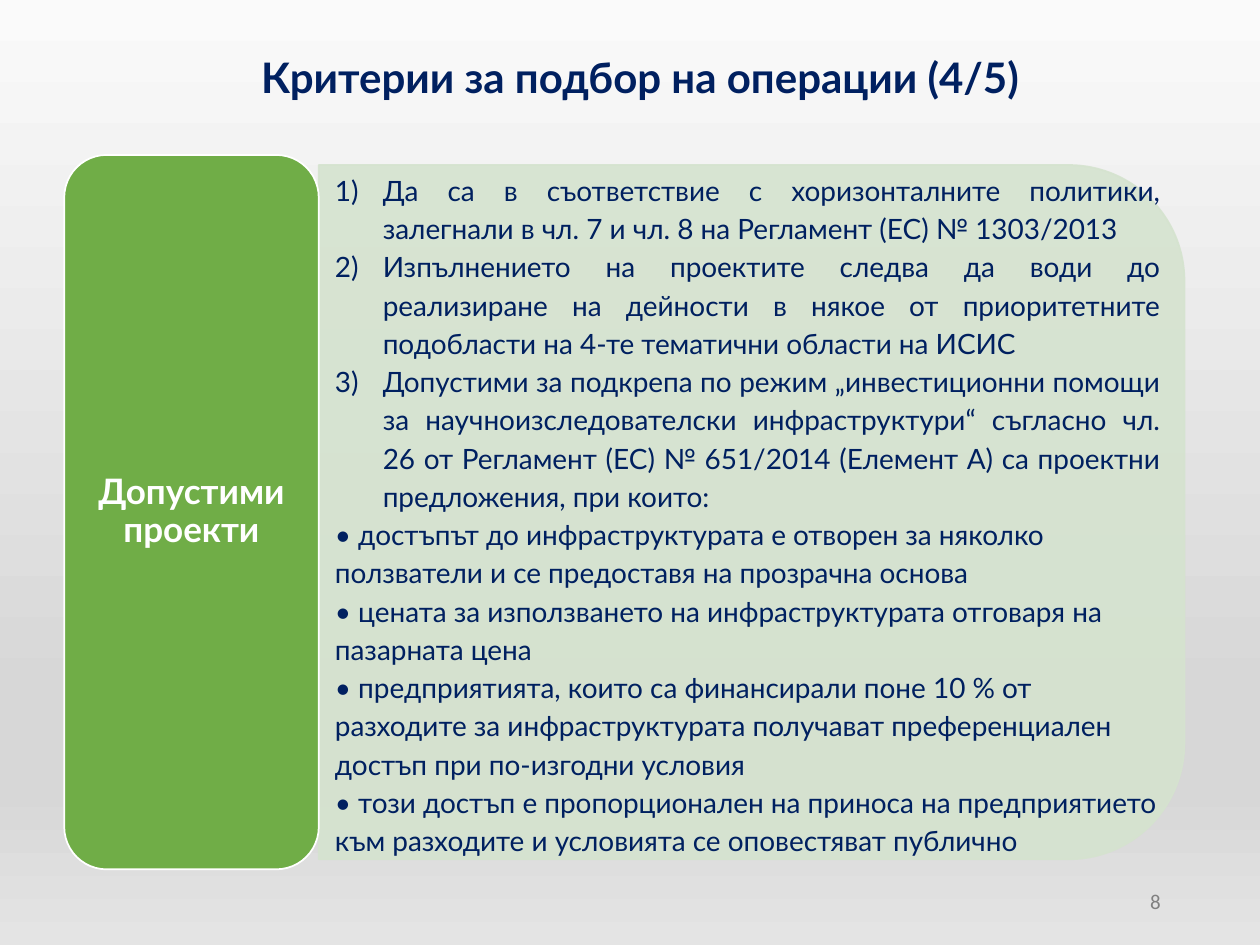
import dataclasses

import pptx
import pptx.dml.color
import pptx.enum.shapes
import pptx.enum.text
import pptx.oxml
import pptx.oxml.ns
import pptx.util
from pptx.util import Inches

ALIGN = pptx.enum.text.PP_ALIGN
ANCHOR = pptx.enum.text.MSO_ANCHOR
SHAPE = pptx.enum.shapes.MSO_SHAPE


@dataclasses.dataclass(frozen=True)
class Theme:
    font: str = "Lato"
    number_font: str = "Calibri"
    navy: str = "002060"
    green: str = "70AD47"
    pale_green: str = "D5E3CF"
    white: str = "FFFFFF"
    gray: str = "808080"
    background: tuple = ((0, "FAFAFA"), (74, "D7D7D7"), (83, "D7D7D7"), (100, "E4E4E4"))
    title_size: int = 24
    label_size: int = 20
    body_size: int = 16
    number_size: int = 12
    body_spacing: float = 1.14


THEME = Theme()

CRITERIA = (
    "Да са в съответствие с хоризонталните политики, залегнали в чл. 7 и чл. 8 на Регламент (ЕС) № 1303/2013",
    "Изпълнението на проектите следва да води до реализиране на дейности в някое от приоритетните "
    "подобласти на 4-те тематични области на ИСИС",
    "Допустими за подкрепа по режим „инвестиционни помощи за научноизследователски инфраструктури“ "
    "съгласно чл. 26 от Регламент (ЕС) № 651/2014 (Елемент А) са проектни предложения, при които:",
)
CONDITIONS = (
    "• достъпът до инфраструктурата е отворен за няколко ползватели и се предоставя на прозрачна основа",
    "• цената за използването на инфраструктурата отговаря на пазарната цена",
    "• предприятията, които са финансирали поне 10 % от разходите за инфраструктурата получават "
    "преференциален достъп при по-изгодни условия",
    "• този достъп е пропорционален на приноса на предприятието към разходите и условията се "
    "оповестяват публично",
)


def rgb(color):
    return pptx.dml.color.RGBColor.from_string(color)


def append_xml(parent, tag, **attributes):
    child = pptx.oxml.parse_xml(f"<a:{tag} {pptx.oxml.ns.nsdecls('a')}/>")
    for name, value in attributes.items():
        child.set(name, str(value))
    parent.append(child)
    return child


def paint_background(slide):
    fill = slide.background.fill
    fill.gradient()
    fill.gradient_angle = 270
    stops = slide.element.find(".//" + pptx.oxml.ns.qn("a:gsLst"))
    for stop in list(stops):
        stops.remove(stop)
    for position, color in THEME.background:
        stop = append_xml(stops, "gs", pos=position * 1000)
        append_xml(stop, "srgbClr", val=color)


def add_panel(slide, kind, box, fill, line, opacity=100):
    shape = slide.shapes.add_shape(kind, *map(Inches, box))
    shape.shadow.inherit = False
    shape.fill.solid()
    shape.fill.fore_color.rgb = rgb(fill)
    shape.line.color.rgb = rgb(line)
    shape.line.width = pptx.util.Pt(1)
    if opacity < 100:
        for color in shape.element.spPr.iter(pptx.oxml.ns.qn("a:srgbClr")):
            append_xml(color, "alpha", val=opacity * 1000)
    return shape


def add_text_box(slide, box, anchor=ANCHOR.TOP):
    frame = slide.shapes.add_textbox(*map(Inches, box)).text_frame
    frame.word_wrap = True
    frame.vertical_anchor = anchor
    return frame


def write(paragraph, text, size, color, align=ALIGN.LEFT, bold=False, font=THEME.font, spacing=None):
    paragraph.alignment = align
    paragraph.line_spacing = spacing
    run = paragraph.add_run()
    run.text = text
    run.font.name = font
    run.font.size = pptx.util.Pt(size)
    run.font.bold = bold
    run.font.color.rgb = rgb(color)


def number_paragraph(paragraph):
    """Give the paragraph a hanging automatic number such as 1)."""
    properties = paragraph._p.get_or_add_pPr()
    indent = Inches(0.38)
    properties.set("marL", str(indent))
    properties.set("indent", str(-indent))
    append_xml(properties, "buFont", typeface="+mj-lt")
    append_xml(properties, "buAutoNum", type="arabicParenR")


def add_label(slide):
    label = add_panel(slide, SHAPE.ROUNDED_RECTANGLE, (0.51, 1.23, 2.02, 5.67), THEME.green, THEME.white)
    frame = label.text_frame
    frame.word_wrap = True
    frame.vertical_anchor = ANCHOR.MIDDLE
    frame.margin_left = frame.margin_right = Inches(0.08)
    write(frame.paragraphs[0], "Допустими проекти", THEME.label_size, THEME.white,
          ALIGN.CENTER, bold=True, spacing=0.9)


def add_criteria(slide):
    frame = add_text_box(slide, (2.56, 1.29, 6.75, 5.63))
    for index, text in enumerate(CRITERIA + CONDITIONS):
        paragraph = frame.add_paragraph() if index else frame.paragraphs[0]
        numbered = index < len(CRITERIA)
        write(paragraph, text, THEME.body_size, THEME.navy,
              ALIGN.JUSTIFY if numbered else ALIGN.LEFT, spacing=THEME.body_spacing)
        if numbered:
            number_paragraph(paragraph)


def main():
    presentation = pptx.Presentation()
    presentation.slide_width = Inches(10)
    presentation.slide_height = Inches(7.5)
    slide = presentation.slides.add_slide(presentation.slide_layouts[6])
    paint_background(slide)

    number = add_text_box(slide, (7.06, 6.95, 2.25, 0.4), ANCHOR.MIDDLE)
    write(number.paragraphs[0], "8", THEME.number_size, THEME.gray, ALIGN.RIGHT, font=THEME.number_font)

    panel = add_panel(slide, SHAPE.ROUND_2_SAME_RECTANGLE, (3.21, 0.63, 5.51, 6.87),
                      THEME.pale_green, THEME.pale_green, opacity=90)
    panel.rotation = 90
    add_label(slide)
    add_criteria(slide)

    title = add_text_box(slide, (0.59, 0.36, 8.98, 0.71))
    write(title.paragraphs[0], "Критерии за подбор на операции (4/5)", THEME.title_size, THEME.navy,
          ALIGN.CENTER, bold=True)
    presentation.save("out.pptx")


if __name__ == "__main__":
    main()
